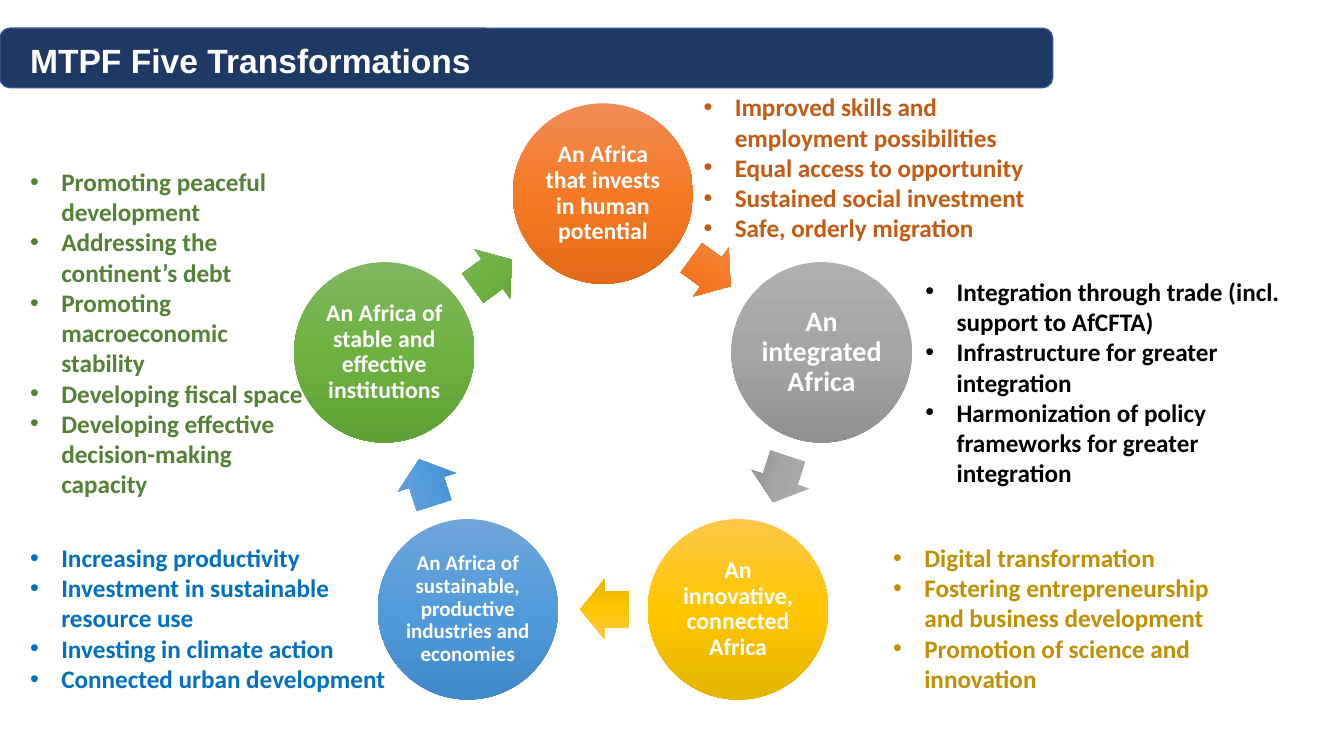
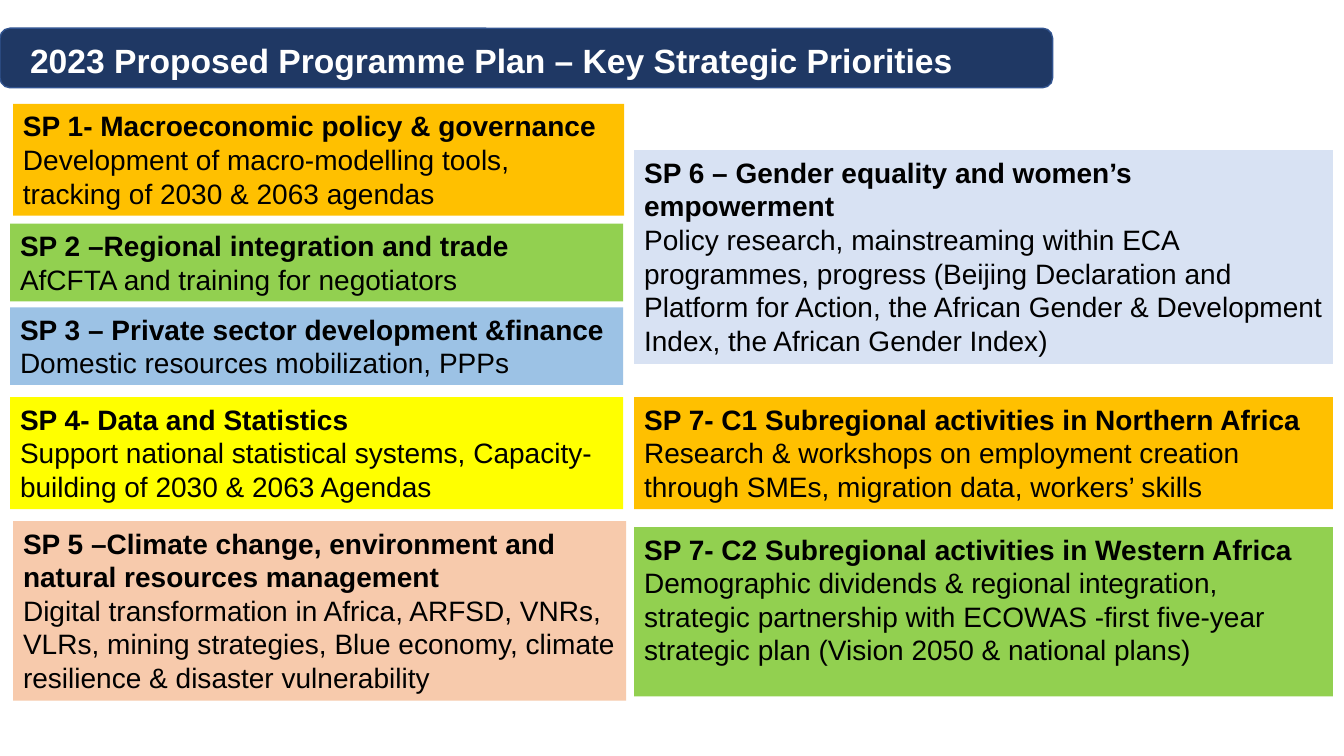
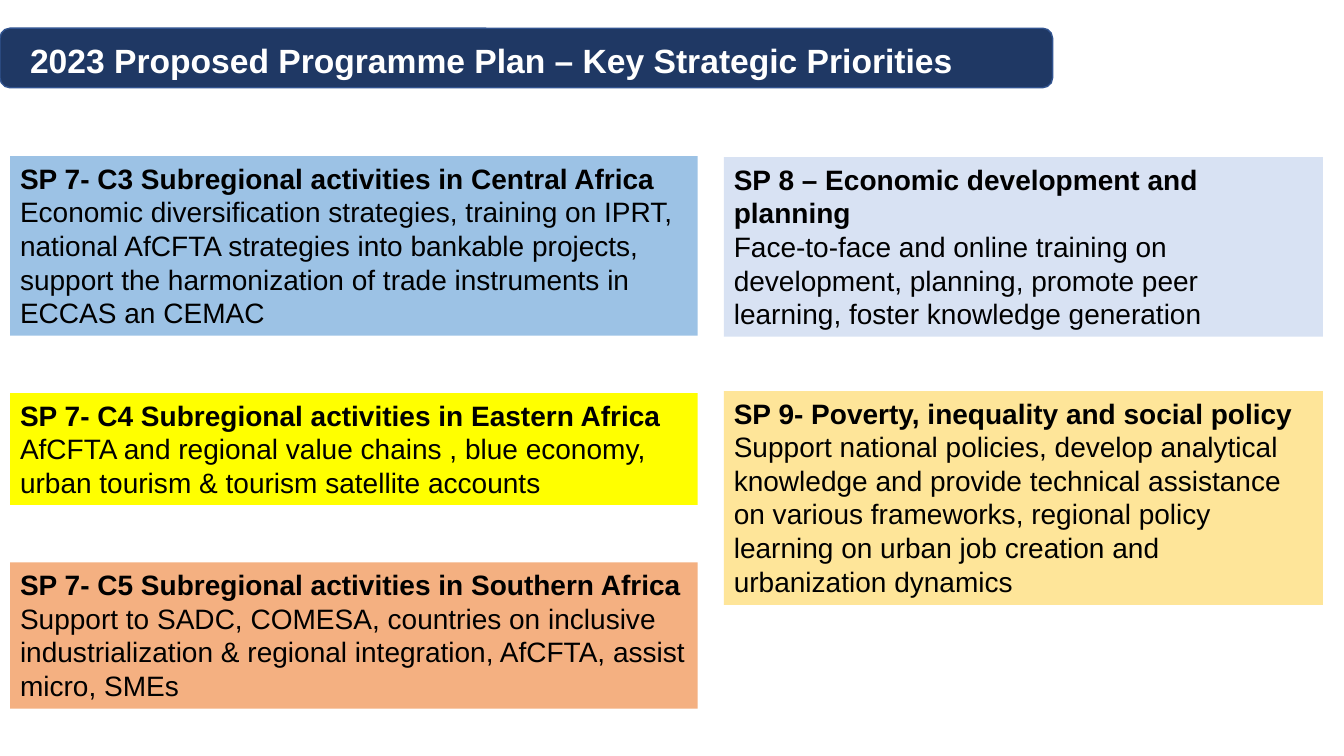
import copy
import math
from lxml import etree
from pptx import Presentation
from pptx.dml.color import RGBColor
from pptx.enum import shapes, text
from pptx.oxml import ns
from pptx.util import Inches, Pt

COLORS = {
    "white": "FFFFFF", "black": "000000", "navy": "1F3864", "navy_line": "31538F",
    "gold": "FFC000", "lime": "92D050", "sky": "9CC2E5", "yellow": "FFFF00",
    "peach": "F7CAAC", "lavender": "D8E2F3", "salmon": "F4B081", "cream": "FEE599",
    "rust": "C55A11", "ochre": "BF9000", "blue": "0070C0", "green": "548135",
}
GRADIENTS = {
    "orange": ("F08B54", "F67A26", "E36A18"),
    "grey": ("AFAFAF", "A5A5A5", "919191"),
    "amber": ("FFC647", "FFC600", "E3B400"),
    "azure": ("6EA5DA", "529BDA", "4188C8"),
    "leaf": ("7FB75F", "6EB141", "5FA134"),
}


def write(sp, lines, size=20, font="Arial", color="black", bold=True, plain_from=None,
          align=text.PP_ALIGN.LEFT, anchor=text.MSO_ANCHOR.TOP, spacing=None,
          bullet=False, inset=None):
    tf = sp.text_frame
    tf.word_wrap = True
    tf.vertical_anchor = anchor
    if inset is not None:
        tf.margin_left = tf.margin_right = tf.margin_top = tf.margin_bottom = Inches(inset)
    for i, line in enumerate(lines):
        p = tf.paragraphs[0] if i == 0 else tf.add_paragraph()
        p.alignment = align
        if spacing:
            p.line_spacing = spacing
        if bullet:
            pPr = p._p.get_or_add_pPr()
            pPr.set("marL", str(Inches(0.31)))
            pPr.set("indent", str(-Inches(0.31)))
            etree.SubElement(pPr, ns.qn("a:buFont")).set("typeface", "Arial")
            etree.SubElement(pPr, ns.qn("a:buChar")).set("char", "•")
        r = p.add_run()
        r.text = line
        r.font.size = Pt(size)
        r.font.name = font
        r.font.bold = bold and (plain_from is None or i < plain_from)
        r.font.color.rgb = RGBColor.from_string(COLORS[color])


def add_filled(s, kind, x, y, w, h, fill, line=None):
    sp = s.shapes.add_shape(kind, Inches(x), Inches(y), Inches(w), Inches(h))
    sp.shadow.inherit = False
    if fill in GRADIENTS:
        sp.fill.gradient()
        sp.fill.gradient_angle = 270
        stops = sp._element.spPr.find(".//" + ns.qn("a:gsLst"))
        stops.insert(1, copy.deepcopy(stops[0]))
        for stop, position, rgb in zip(sp.fill.gradient_stops, (0, 0.5, 1), GRADIENTS[fill]):
            stop.position = position
            stop.color.rgb = RGBColor.from_string(rgb)
    else:
        sp.fill.solid()
        sp.fill.fore_color.rgb = RGBColor.from_string(COLORS[fill])
    if line:
        sp.line.color.rgb = RGBColor.from_string(COLORS[line])
        sp.line.width = Pt(1)
    else:
        sp.line.fill.background()
    return sp


prs = Presentation()
prs.slide_width, prs.slide_height = Inches(13.33), Inches(7.5)
blank = prs.slide_layouts[6]

plan_title = "2023 Proposed Programme Plan – Key Strategic Priorities"
slides = []
for title in ("MTPF Five Transformations", plan_title, plan_title):
    s = prs.slides.add_slide(blank)
    if not slides:
        band = add_filled(s, shapes.MSO_SHAPE.ROUNDED_RECTANGLE, 0, 0.28, 10.44, 0.59,
                          "navy", "navy_line")
        band._element.nvSpPr.cNvPr.set("id", "20")
        blank.shapes._spTree.append(band._element)
    sp = s.shapes.add_textbox(Inches(0.2), Inches(0.35), Inches(9.69), Inches(0.5))
    write(sp, [title], size=24, color="white")
    slides.append(s)

cycle = [
    ("An Africa that invests in human potential", 17, "orange"),
    ("An integrated Africa", 20, "grey"),
    ("An innovative, connected Africa", 17, "amber"),
    ("An Africa of sustainable, productive industries and economies", 15, "azure"),
    ("An Africa of stable and effective institutions", 17, "leaf"),
]
center_x, center_y, radius, diameter = 5.98, 4.2, 2.28, 1.79
arrow_radius = radius * math.cos(math.radians(36))
arrow_w, arrow_h = 0.48, 0.6
for i, (label, size, fill) in enumerate(cycle):
    angle = math.radians(72 * i)
    x = center_x + radius * math.sin(angle) - diameter / 2
    y = center_y - radius * math.cos(angle) - diameter / 2
    sp = add_filled(slides[0], shapes.MSO_SHAPE.OVAL, x, y, diameter, diameter, fill)
    write(sp, [label], size=size, font="Calibri", color="white", spacing=0.9, inset=0.02,
          align=text.PP_ALIGN.CENTER, anchor=text.MSO_ANCHOR.MIDDLE)
    angle = math.radians(72 * i + 35.5)
    x = center_x + arrow_radius * math.sin(angle) - arrow_w / 2
    y = center_y - arrow_radius * math.cos(angle) - arrow_h / 2
    sp = add_filled(slides[0], shapes.MSO_SHAPE.RIGHT_ARROW, x, y, arrow_w, arrow_h, fill)
    sp.adjustments[0], sp.adjustments[1] = 0.6, 0.5
    sp.rotation = 72 * i + 36

goals = [
    (6.88, 0.86, 3.76, 1.62, "rust", [
        "Improved skills and employment possibilities",
        "Equal access to opportunity",
        "Sustained social investment",
        "Safe, orderly migration"]),
    (9.08, 2.69, 3.76, 2.22, "black", [
        "Integration through trade (incl. support to AfCFTA)",
        "Infrastructure for greater integration",
        "Harmonization of policy frameworks for greater integration"]),
    (8.76, 5.33, 3.76, 1.92, "ochre", [
        "Digital transformation",
        "Fostering entrepreneurship and business development",
        "Promotion of science and innovation"]),
    (0.2, 5.33, 3.76, 1.92, "blue", [
        "Increasing productivity",
        "Investment in sustainable resource use",
        "Investing in climate action",
        "Connected urban development"]),
    (0.2, 1.6, 2.95, 3.43, "green", [
        "Promoting peaceful development",
        "Addressing the continent’s debt",
        "Promoting macroeconomic stability",
        "Developing fiscal space",
        "Developing effective decision-making capacity"]),
]
for x, y, w, h, color, lines in goals:
    sp = slides[0].shapes.add_textbox(Inches(x), Inches(y), Inches(w), Inches(h))
    write(sp, lines, size=18, font="Calibri", color=color, bullet=True)

programmes = [
    (slides[1], [
        (0.13, 1.03, 6.06, 1.11, "gold", "SP 1- Macroeconomic policy & governance",
         "Development of macro-modelling tools, tracking of 2030 & 2063 agendas"),
        (0.1, 2.22, 6.08, 0.77, "lime", "SP 2 –Regional integration and trade",
         "AfCFTA and training for negotiators"),
        (0.1, 3.05, 6.08, 0.77, "sky", "SP 3 – Private sector development &finance",
         "Domestic resources mobilization, PPPs"),
        (0.1, 3.94, 6.08, 1.11, "yellow", "SP 4- Data and Statistics",
         "Support national statistical systems, Capacity-building of 2030 & 2063 Agendas"),
        (0.13, 5.17, 6.08, 1.78, "peach",
         "SP 5 –Climate change, environment and natural resources management",
         "Digital transformation in Africa, ARFSD, VNRs, VLRs, mining strategies, "
         "Blue economy, climate resilience & disaster vulnerability"),
        (6.29, 1.49, 6.93, 2.12, "lavender",
         "SP 6 – Gender equality and women’s empowerment",
         "Policy research, mainstreaming within ECA programmes, progress (Beijing "
         "Declaration and Platform for Action, the African Gender & Development Index, "
         "the African Gender Index)"),
        (6.29, 3.94, 6.93, 1.11, "gold", "SP 7- C1 Subregional activities in Northern Africa",
         "Research & workshops on employment creation through SMEs, migration data, "
         "workers’ skills"),
        (6.29, 5.23, 6.93, 1.68, "lime", "SP 7- C2 Subregional activities in Western Africa",
         "Demographic dividends & regional integration, strategic partnership with ECOWAS "
         "-first five-year strategic plan (Vision 2050 & national plans)"),
    ]),
    (slides[2], [
        (0.1, 1.55, 6.82, 1.78, "sky", "SP 7- C3 Subregional activities in Central Africa",
         "Economic diversification strategies, training on IPRT, national AfCFTA strategies "
         "into bankable projects, support the harmonization of trade instruments in ECCAS "
         "an CEMAC"),
        (0.1, 3.9, 6.82, 1.11, "yellow", "SP 7- C4 Subregional activities in Eastern Africa",
         "AfCFTA and regional value chains , blue economy, urban tourism & tourism "
         "satellite accounts"),
        (0.1, 5.58, 6.82, 1.45, "salmon", "SP 7- C5 Subregional activities in Southern Africa",
         "Support to SADC, COMESA, countries on inclusive industrialization & regional "
         "integration, AfCFTA, assist micro, SMEs"),
        (7.18, 1.56, 5.94, 1.78, "lavender", "SP 8 – Economic development and planning",
         "Face-to-face and online training on development, planning, promote peer "
         "learning, foster knowledge generation"),
        (7.18, 3.88, 5.94, 2.12, "cream", "SP 9- Poverty, inequality and social policy",
         "Support national policies, develop analytical knowledge and provide technical "
         "assistance on various frameworks, regional policy learning on urban job creation "
         "and urbanization dynamics"),
    ]),
]
for s, cards in programmes:
    for x, y, w, h, fill, heading, detail in cards:
        sp = add_filled(s, shapes.MSO_SHAPE.RECTANGLE, x, y, w, h, fill)
        write(sp, [heading, detail], plain_from=1)

prs.save("out.pptx")
